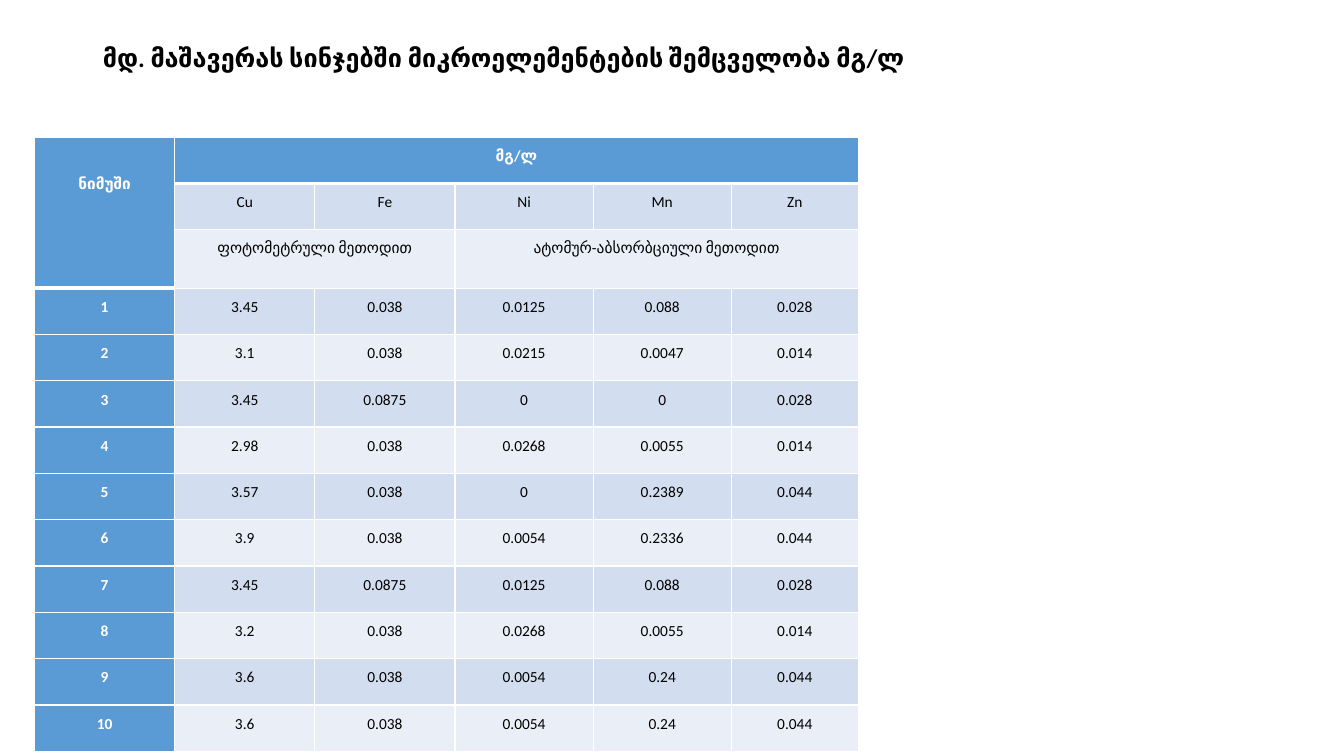
from pptx import Presentation
from pptx.dml.color import RGBColor
from pptx.enum.text import MSO_ANCHOR, PP_ALIGN
from pptx.oxml.ns import qn
from pptx.util import Inches, Pt
from lxml import etree

TOP = MSO_ANCHOR.TOP
LEFT, CENTER = PP_ALIGN.LEFT, PP_ALIGN.CENTER
TITLE_ONLY = 5

TITLE = "მდ. მაშავერას სინჯებში მიკროელემენტების შემცველობა მგ/ლ"
HEADER_ROWS = [
    ["ნიმუში", "მგ/ლ", "", "", "", ""],
    ["", "Cu", "Fe", "Ni", "Mn", "Zn"],
    ["", "ფოტომეტრული მეთოდით", "", "ატომურ-აბსორბციული მეთოდით", "", ""],
]
SAMPLES = [
    ["3.45", "0.038", "0.0125", "0.088", "0.028"],
    ["3.1", "0.038", "0.0215", "0.0047", "0.014"],
    ["3.45", "0.0875", "0", "0", "0.028"],
    ["2.98", "0.038", "0.0268", "0.0055", "0.014"],
    ["3.57", "0.038", "0", "0.2389", "0.044"],
    ["3.9", "0.038", "0.0054", "0.2336", "0.044"],
    ["3.45", "0.0875", "0.0125", "0.088", "0.028"],
    ["3.2", "0.038", "0.0268", "0.0055", "0.014"],
    ["3.6", "0.038", "0.0054", "0.24", "0.044"],
    ["3.6", "0.038", "0.0054", "0.24", "0.044"],
]
# First and last cell of each merged block, as (row, column)
MERGES = [((0, 0), (2, 0)), ((0, 1), (0, 5)), ((2, 1), (2, 2)), ((2, 3), (2, 5))]

# Shares of the slide's size, in percent
COLUMN_WIDTHS = [10.43, 10.43, 10.43, 10.28, 10.28, 9.45]
ROW_HEIGHT, METHOD_ROW_HEIGHT = 6.13, 7.73


def color(code):
    return RGBColor.from_string(code)


class Page:
    """Style and current slide; lengths are percent of the slide's size."""

    font = "Calibri"
    black, white = "000000", "FFFFFF"
    blue, band_dark, band_light = "5B9BD5", "D2DEEF", "EAEFF7"

    def __init__(self, deck):
        self.deck = deck
        self.slide = deck.slides.add_slide(deck.slide_layouts[TITLE_ONLY])

    def x(self, share):
        return round(self.deck.slide_width * share / 100)

    def y(self, share):
        return round(self.deck.slide_height * share / 100)

    def set_text(self, frame, text, size, code, bold, align, spacing):
        frame.text = text
        para = frame.paragraphs[0]
        para.alignment, para.line_spacing = align, spacing
        for span in para.runs:
            span.font.name, span.font.size = self.font, Pt(size)
            span.font.bold = bold
            span.font.color.rgb = color(code)

    def title(self, text, left, top, width, height):
        box = self.slide.shapes.title
        box.left, box.top = self.x(left), self.y(top)
        box.width, box.height = self.x(width), self.y(height)
        box.text_frame.word_wrap = True
        box.text_frame.vertical_anchor = TOP
        self.set_text(box.text_frame, text, 18, self.black, True, LEFT, 0.9)

    def border(self, cell, side, points):
        line = etree.SubElement(cell._tc.get_or_add_tcPr(), qn(f"a:ln{side}"), w=str(Pt(points)))
        fill = etree.SubElement(line, qn("a:solidFill"))
        etree.SubElement(fill, qn("a:srgbClr"), val=self.white)

    def cell(self, cell, text, row, column):
        header = row == 0 or column == 0
        # A thick rule closes the top header and the sample header
        last_header_row = 2 if column == 0 else 0
        for side in "LRTB":
            thick = (side == "B" and row == last_header_row
                     or side == "T" and row == last_header_row + 1)
            self.border(cell, side, 3 if thick else 1)
        band = self.band_dark if row % 2 else self.band_light
        cell.fill.solid()
        cell.fill.fore_color.rgb = color(self.blue if header else band)
        cell.margin_left = cell.margin_right = Inches(0.07)
        cell.margin_top = cell.margin_bottom = 0
        cell.vertical_anchor = TOP
        if text:
            ink = self.white if header else self.black
            self.set_text(cell.text_frame, text, 11, ink, header, CENTER, 1.5)

    def table(self, rows, left, top, widths, heights, merges):
        table = self.slide.shapes.add_table(
            len(rows), len(widths), self.x(left), self.y(top),
            self.x(sum(widths)), self.y(sum(heights))).table
        for column, width in zip(table.columns, widths):
            column.width = self.x(width)
        for row, height in zip(table.rows, heights):
            row.height = self.y(height)
        for r, texts in enumerate(rows):
            for c, text in enumerate(texts):
                self.cell(table.cell(r, c), text, r, c)
        for first, last in merges:
            table.cell(*first).merge(table.cell(*last))
        return table


def main():
    deck = Presentation()
    deck.slide_width, deck.slide_height = Inches(13.33), Inches(7.5)
    page = Page(deck)

    # Heading
    page.title(TITLE, 6.9, 5.33, 65.87, 15.33)

    # Table of element content by sample
    samples = [[str(number), *values] for number, values in enumerate(SAMPLES, 1)]
    rows = HEADER_ROWS + samples
    heights = [ROW_HEIGHT] * len(rows)
    heights[2] = METHOD_ROW_HEIGHT
    table = page.table(rows, 2.57, 18.13, COLUMN_WIDTHS, heights, MERGES)
    table.cell(0, 0).margin_top = Inches(0.28)

    deck.save("out.pptx")


if __name__ == "__main__":
    main()
